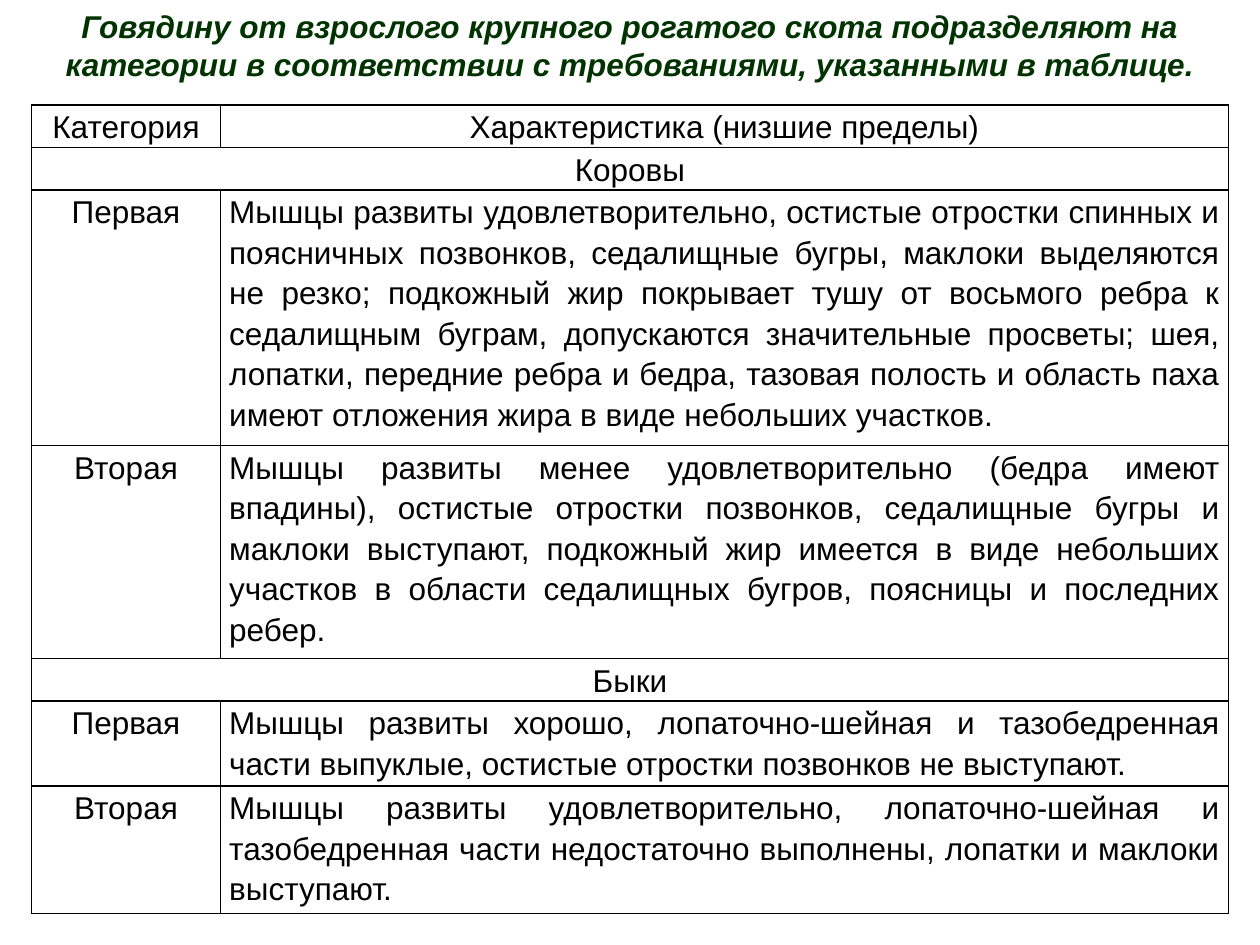
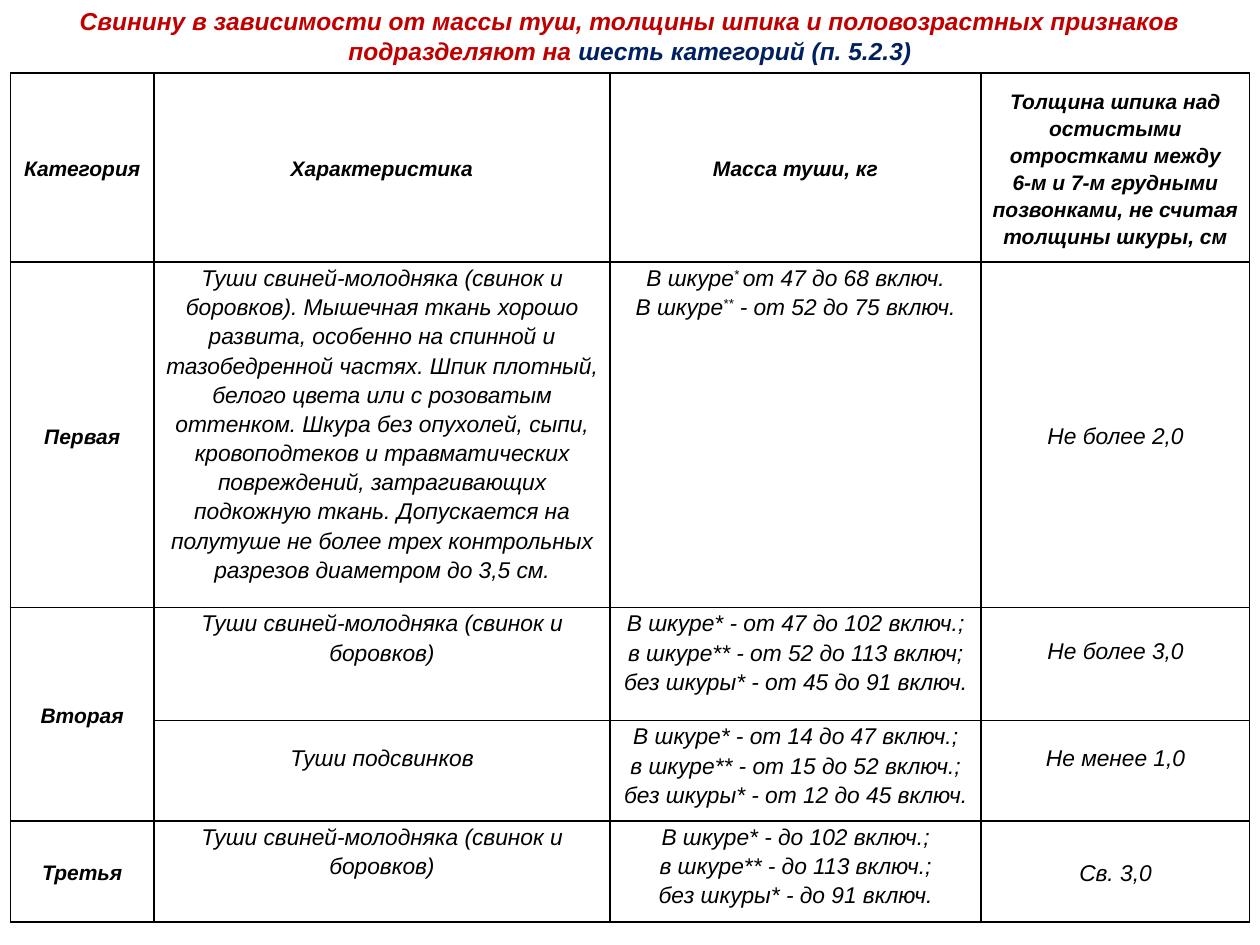
import pptx
import pptx.dml.color
import pptx.enum.text
import pptx.oxml
import pptx.oxml.ns
import pptx.util
from lxml import etree

Pt = pptx.util.Pt
RGBColor = pptx.dml.color.RGBColor
ALIGN = pptx.enum.text.PP_ALIGN
ANCHOR = pptx.enum.text.MSO_ANCHOR

BLACK = RGBColor(0x00, 0x00, 0x00)
GREEN = RGBColor(0x00, 0x33, 0x00)
RED = RGBColor(0xC0, 0x00, 0x00)
NAVY = RGBColor(0x00, 0x20, 0x60)
FONT = "Arial"
SLIDE_WIDTH, SLIDE_HEIGHT = 720, 540
SIDE_INSET = 5
LINE_SPACING = 1.15
RAISED_MARK = "^"

BEEF_ROWS = [
    ("Категория", "Характеристика (низшие пределы)"),
    ("Коровы",),
    ("Первая", "Мышцы развиты удовлетворительно, остистые отростки спинных и "
     "поясничных позвонков, седалищные бугры, маклоки выделяются не резко; "
     "подкожный жир покрывает тушу от восьмого ребра к седалищным буграм, "
     "допускаются значительные просветы; шея, лопатки, передние ребра и бедра, "
     "тазовая полость и область паха имеют отложения жира в виде небольших участков."),
    ("Вторая", "Мышцы развиты менее удовлетворительно (бедра имеют впадины), "
     "остистые отростки позвонков, седалищные бугры и маклоки выступают, "
     "подкожный жир имеется в виде небольших участков в области седалищных "
     "бугров, поясницы и последних ребер."),
    ("Быки",),
    ("Первая", "Мышцы развиты хорошо, лопаточно-шейная и тазобедренная части "
     "выпуклые, остистые отростки позвонков не выступают."),
    ("Вторая", "Мышцы развиты удовлетворительно, лопаточно-шейная и "
     "тазобедренная части недостаточно выполнены, лопатки и маклоки выступают."),
]

YOUNG_PIGS = "Туши свиней-молодняка (свинок и боровков)"
PORK_ROWS = [
    ("Категория", "Характеристика", "Масса туши, кг",
     "Толщина шпика над остистыми отростками между\n"
     "6-м и 7-м грудными позвонками, не считая толщины шкуры, см"),
    ("Первая", YOUNG_PIGS + ". Мышечная ткань хорошо развита, особенно на "
     "спинной и тазобедренной частях. Шпик плотный, белого цвета или с "
     "розоватым оттенком. Шкура без опухолей, сыпи, кровоподтеков и "
     "травматических повреждений, затрагивающих подкожную ткань. Допускается "
     "на полутуше не более трех контрольных разрезов диаметром до 3,5 см.",
     "В шкуре^* ^от 47 до 68 включ.\nВ шкуре^**^ - от 52 до 75 включ.",
     "Не более 2,0"),
    ("Вторая", YOUNG_PIGS,
     "В шкуре* - от 47 до 102 включ.;\nв шкуре** - от 52 до 113 включ;\n"
     "без шкуры* - от 45 до 91 включ.", "Не более 3,0"),
    ("", "Туши подсвинков",
     "В шкуре* - от 14 до 47 включ.;\nв шкуре** - от 15 до 52 включ.;\n"
     "без шкуры* - от 12 до 45 включ.", "Не менее 1,0"),
    ("Третья", YOUNG_PIGS,
     "В шкуре* - до 102 включ.;\nв шкуре** - до 113 включ.;\n"
     "без шкуры* - до 91 включ.", "Св. 3,0"),
]


def style_run(run, size, color=BLACK, bold=False, italic=False):
    font = run.font
    font.name, font.size, font.bold, font.italic = FONT, Pt(size), bold, italic
    font.color.rgb = color


def add_heading(slide, box, size, anchor, parts):
    frame = slide.shapes.add_textbox(*map(Pt, box)).text_frame
    frame.word_wrap = True
    frame.vertical_anchor = anchor
    sentence = frame.paragraphs[0]
    sentence.alignment = ALIGN.CENTER
    for text, color in parts:
        run = sentence.add_run()
        run.text = text
        style_run(run, size, color, True, True)


def outline_cell(cell):
    properties = cell._tc.get_or_add_tcPr()
    for side in ("lnL", "lnR", "lnT", "lnB"):
        properties.append(pptx.oxml.parse_xml(
            f'<a:{side} {pptx.oxml.ns.nsdecls("a")} w="{Pt(1)}">'
            f'<a:solidFill><a:srgbClr val="{BLACK}"/></a:solidFill></a:{side}>'))
    cell.fill.background()


def fill_cell(cell, text, size, align=ALIGN.CENTER, anchor=ANCHOR.TOP,
              bold=False, italic=False):
    cell.vertical_anchor = anchor
    cell.text_frame.text = text.replace(RAISED_MARK, "")
    for paragraph, line in zip(cell.text_frame.paragraphs, text.split("\n")):
        paragraph.alignment = align
        paragraph.line_spacing = LINE_SPACING
        paragraph.clear()
        for index, piece in enumerate(line.split(RAISED_MARK)):
            run = paragraph.add_run()
            run.text = piece
            style_run(run, size, BLACK, bold, italic)
            if index % 2:
                run._r.get_or_add_rPr().set("baseline", "30000")


def add_grid(slide, left, top, widths, heights):
    grid = slide.shapes.add_table(
        len(heights), len(widths), Pt(left), Pt(top),
        Pt(sum(widths)), Pt(sum(heights))).table
    grid.first_row = grid.horz_banding = False
    for column, width in zip(grid.columns, widths):
        column.width = Pt(width)
    for row, height in zip(grid.rows, heights):
        row.height = Pt(height)
    for cell in grid.iter_cells():
        cell.margin_left = cell.margin_right = Pt(SIDE_INSET)
        cell.margin_top = cell.margin_bottom = 0
        outline_cell(cell)
    return grid


def build_beef_table(slide, left, top):
    grid = add_grid(slide, left, top, (108, 576),
                    (24.3, 24.3, 146, 121.7, 24.3, 48.5, 73))
    for row, texts in enumerate(BEEF_ROWS):
        if len(texts) == 1:
            grid.cell(row, 0).merge(grid.cell(row, 1))
        for column, text in enumerate(texts):
            body = row > 0 and column == 1
            fill_cell(grid.cell(row, column), text, 18,
                      ALIGN.JUSTIFY if body else ALIGN.CENTER)


def build_pork_table(slide, left, top):
    grid = add_grid(slide, left, top, (82, 260.5, 212.2, 153.5),
                    (108, 192.6, 64.6, 57.4, 57.6))
    grid.cell(2, 0).merge(grid.cell(3, 0))
    for row, texts in enumerate(PORK_ROWS):
        for column, text in enumerate(texts):
            if not text:
                continue
            label = row == 0 or column == 0
            middle = label or column == 3 or (row, column) == (3, 1)
            fill_cell(grid.cell(row, column), text, 12 if label else 13,
                      anchor=ANCHOR.MIDDLE if middle else ANCHOR.TOP,
                      bold=label, italic=True)
    for row, column in ((2, 3), (3, 1), (3, 3)):
        grid.cell(row, column).margin_bottom = Pt(16)


def build_beef_slide(slide):
    build_beef_table(slide, 18, 60)
    add_heading(slide, (0, 0, SLIDE_WIDTH, 51), 18, ANCHOR.MIDDLE, [
        ("Говядину от взрослого крупного рогатого скота подразделяют на "
         "категории в соответствии с требованиями, указанными в таблице.", GREEN)])


def build_pork_slide(slide):
    build_pork_table(slide, 6, 41.8)
    add_heading(slide, (0, 0, SLIDE_WIDTH, 41), 14, ANCHOR.TOP, [
        ("Свинину в зависимости от массы туш, толщины шпика и половозрастных "
         "признаков подразделяют на ", RED),
        ("шесть категорий (п. 5.2.3)", NAVY)])


def main():
    deck = pptx.Presentation()
    deck.slide_width, deck.slide_height = Pt(SLIDE_WIDTH), Pt(SLIDE_HEIGHT)
    for build in (build_beef_slide, build_pork_slide):
        build(deck.slides.add_slide(deck.slide_layouts[6]))
    deck.save("out.pptx")


if __name__ == "__main__":
    main()
